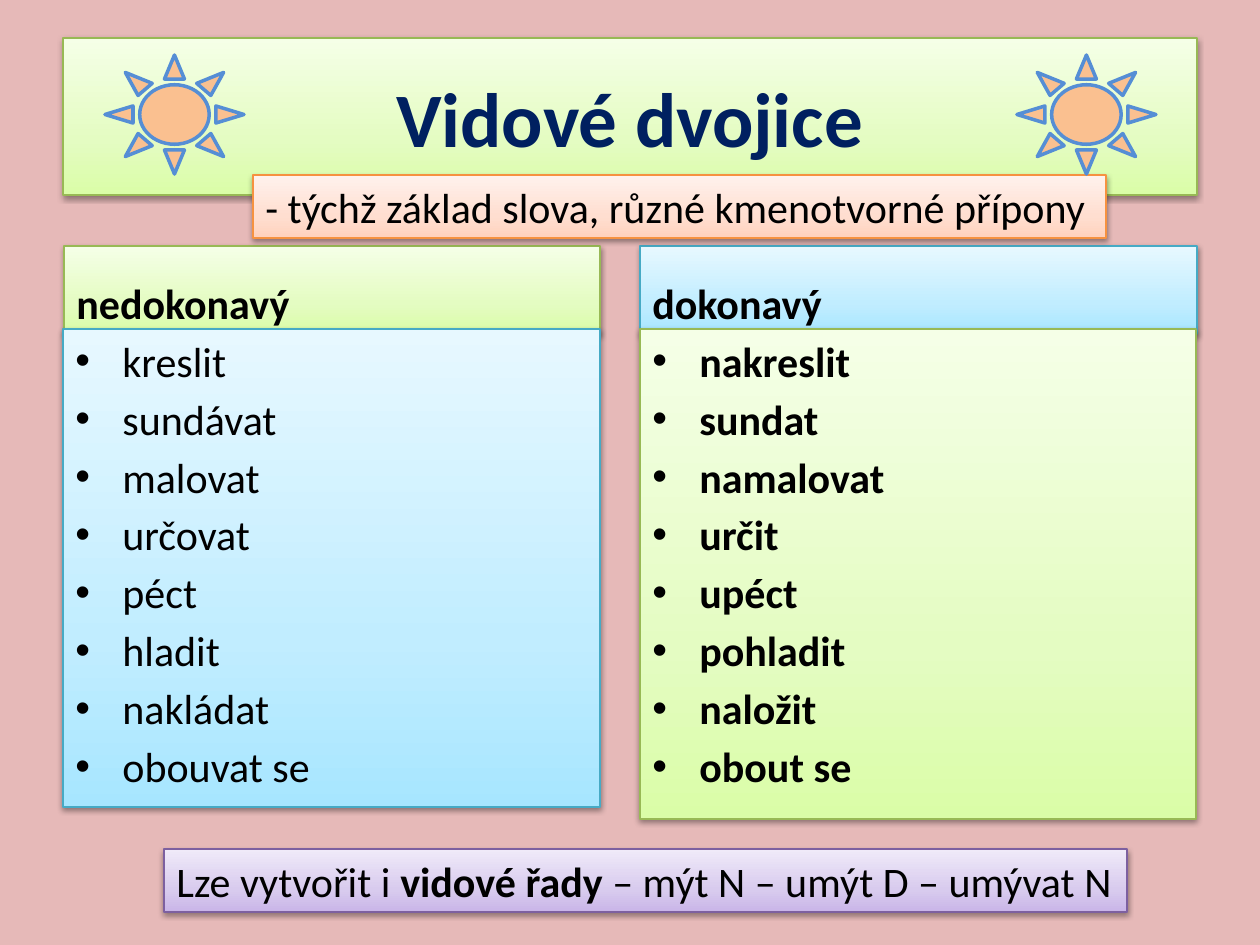
import pptx
import pptx.dml.color
import pptx.enum.shapes
import pptx.enum.text
import pptx.oxml
import pptx.oxml.ns
import pptx.util

EMU_PER_PX = 914400 / 126
THEME = {
    "font": "Calibri",
    "title_size": 44,
    "text_size": 24,
    "line_gap": 4.3,
    "background": "E6B9B8",
    "title": "002060",
    "text": "000000",
    "sun": "FAC090",
    "sun_line": "558ED5",
    # gradient from bottom to top, then the outline
    "green": ("DAFDA7", "E4FCC2", "F5FFE7", "98B955"),
    "blue": ("A7E6FF", "C1EDFF", "E7F8FF", "46AAC5"),
    "purple": ("C9B5E8", "D8CBEE", "F0EAF9", "7D60A0"),
    "orange": ("FFD2BD", "FFDED0", "FFF2ED", "F69240"),
}
NS = pptx.oxml.ns.nsdecls("a")
ANCHOR = pptx.enum.text.MSO_ANCHOR
ALIGN = pptx.enum.text.PP_ALIGN
SHAPE = pptx.enum.shapes.MSO_SHAPE
rgb = pptx.dml.color.RGBColor.from_string


def px(length):
    return pptx.util.Emu(round(length * EMU_PER_PX))


def add_panel(box, tint, paragraphs, size="text_size", color="text", bold=False,
              anchor=ANCHOR.TOP, align=ALIGN.LEFT, bullets=False, wrap=True, grow=False):
    """Add a shaded, shadowed box; each paragraph is a list of (text, bold) or a string."""
    panel = slide.shapes.add_shape(SHAPE.RECTANGLE, *map(px, box))
    *stops, outline = THEME[tint]
    panel.line.color.rgb = rgb(outline)
    panel.line.width = pptx.util.Pt(0.75)
    panel.fill.background()
    gradient = "".join(
        f'<a:gs pos="{pos}"><a:srgbClr val="{stop}"/></a:gs>'
        for pos, stop in zip((0, 35000, 100000), stops))
    properties = panel._element.spPr
    no_fill = properties.find(pptx.oxml.ns.qn("a:noFill"))
    properties.replace(no_fill, pptx.oxml.parse_xml(
        f'<a:gradFill {NS} rotWithShape="1"><a:gsLst>{gradient}</a:gsLst>'
        '<a:lin ang="16200000" scaled="1"/></a:gradFill>'))
    properties.append(pptx.oxml.parse_xml(
        f'<a:effectLst {NS}><a:outerShdw blurRad="40000" dist="20000" dir="5400000" '
        'rotWithShape="0"><a:srgbClr val="000000"><a:alpha val="38000"/></a:srgbClr>'
        '</a:outerShdw></a:effectLst>'))

    frame = panel.text_frame
    frame.word_wrap = wrap
    frame.vertical_anchor = anchor
    if grow:
        frame.auto_size = pptx.enum.text.MSO_AUTO_SIZE.SHAPE_TO_FIT_TEXT
    for index, content in enumerate(paragraphs):
        paragraph = frame.add_paragraph() if index else frame.paragraphs[0]
        paragraph.alignment = align
        pieces = [(content, bold)] if isinstance(content, str) else content
        for text, is_bold in pieces:
            run = paragraph.add_run()
            run.text = text
            run.font.name = THEME["font"]
            run.font.size = pptx.util.Pt(THEME[size])
            run.font.bold = is_bold
            run.font.color.rgb = rgb(THEME[color])
        if bullets:
            paragraph.space_before = pptx.util.Pt(THEME["line_gap"])
            settings = paragraph._p.get_or_add_pPr()
            settings.set("marL", str(px(47)))
            settings.set("indent", str(-px(47)))
            settings.append(pptx.oxml.parse_xml(f'<a:buFont {NS} typeface="Arial"/>'))
            settings.append(pptx.oxml.parse_xml(f'<a:buChar {NS} char="•"/>'))


presentation = pptx.Presentation()
presentation.slide_width = px(1260)
presentation.slide_height = px(945)
slide = presentation.slides.add_slide(presentation.slide_layouts[6])
slide.background.fill.solid()
slide.background.fill.fore_color.rgb = rgb(THEME["background"])

add_panel((63, 38, 1134, 157), "green", ["Vidové dvojice"], size="title_size",
          color="title", bold=True, anchor=ANCHOR.MIDDLE, align=ALIGN.CENTER)

imperfective = ["kreslit", "sundávat", "malovat", "určovat",
                "péct", "hladit", "nakládat", "obouvat se"]
perfective = ["nakreslit", "sundat", "namalovat", "určit",
              "upéct", "pohladit", "naložit", "obout se"]
columns = [
    ("nedokonavý", (64, 246, 536, 88), "green",
     imperfective, (63, 329, 537, 478), "blue", False),
    ("dokonavý", (640, 246, 557, 88), "blue",
     perfective, (640, 329, 556, 490), "green", True),
]
for heading, heading_box, heading_tint, verbs, verbs_box, verbs_tint, bold in columns:
    add_panel(heading_box, heading_tint, [heading], bold=True, anchor=ANCHOR.BOTTOM)
    add_panel(verbs_box, verbs_tint, verbs, bold=bold, bullets=True, grow=not bold)

add_panel((164, 849, 963, 63), "purple",
          [[("Lze vytvořit i ", False), ("vidové řady", True),
            (" – mýt N – umýt D – umývat N", False)]], wrap=False, grow=True)
add_panel((253, 175, 853, 63), "orange",
          ["- týchž základ slova, různé kmenotvorné přípony"], wrap=False, grow=True)

for left in (1017, 105):
    sun = slide.shapes.add_shape(SHAPE.SUN, px(left), px(55), px(139), px(119))
    sun.shadow.inherit = False
    sun.fill.solid()
    sun.fill.fore_color.rgb = rgb(THEME["sun"])
    sun.line.color.rgb = rgb(THEME["sun_line"])
    sun.line.width = pptx.util.Pt(2)

presentation.save("out.pptx")
